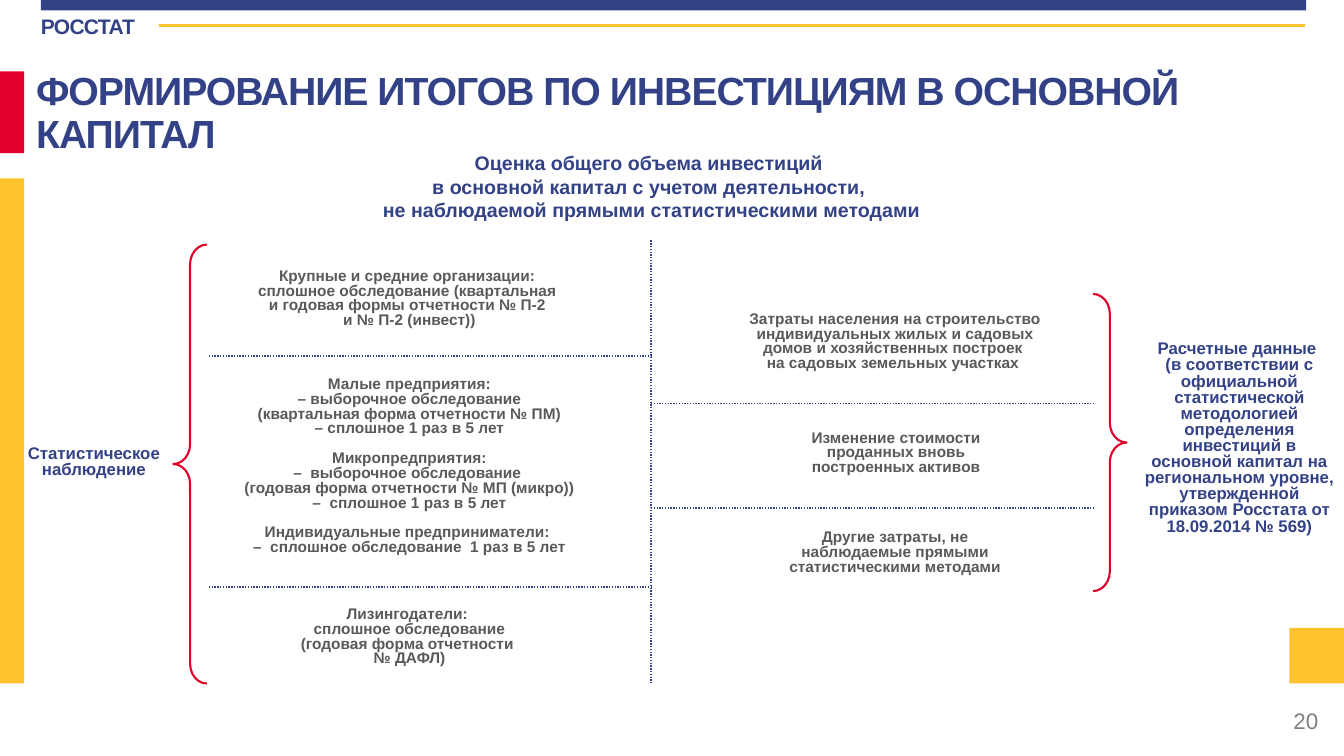
import copy

import pptx
import pptx.dml.color
import pptx.enum.dml
import pptx.enum.shapes
import pptx.enum.text
import pptx.oxml.ns
import pptx.util

PX = 9525
BLUE, RED, YELLOW, GREY = "334286", "E1002B", "FFC32E", "595959"
ALIGN = pptx.enum.text.PP_ALIGN
SHAPE = pptx.enum.shapes.MSO_SHAPE

SURVEYS = [
    (24, 23, 334, 66, [
        "Крупные и средние организации: \vсплошное обследование (квартальная \v"
        "и годовая формы отчетности № П-2 \vи № П-2 (инвест))"]),
    (24, 126, 334, 180, [
        "Малые предприятия:\v– выборочное обследование\v"
        "(квартальная форма отчетности № ПМ)\v– сплошное 1 раз в 5 лет",
        "Микропредприятия:\v–  выборочное обследование \v"
        "(годовая форма отчетности № МП (микро))\v–  сплошное 1 раз в 5 лет",
        "Индивидуальные предприниматели: \v–  сплошное обследование  1 раз в 5 лет"]),
    (46, 345, 290, 66, [
        "Лизингодатели: \vсплошное обследование\v(годовая форма отчетности \v№ ДАФЛ)"]),
]
ESTIMATES = [
    (73, 64, 319, 66, [
        "Затраты населения на строительство индивидуальных жилых и садовых домов "
        "и хозяйственных построек \vна садовых земельных участках "]),
    (110, 177, 247, 53, ["Изменение стоимости проданных вновь построенных активов"]),
    (100, 272, 265, 53, ["Другие затраты, не наблюдаемые прямыми статистическими методами"]),
]
METHOD = ("Расчетные данные \v(в соответствии с официальной статистической методологией "
          "определения инвестиций в основной капитал на региональном уровне, "
          "утвержденной приказом Росстата от 18.09.2014 № 569)")


def color(value):
    """Return an RGB colour from a hex string."""
    return pptx.dml.color.RGBColor.from_string(value)


def emu(*lengths):
    """Turn px lengths into EMU."""
    return [length * PX for length in lengths]


def text(s, box, paragraphs, size, fill=BLUE, bold=True, align=ALIGN.CENTER,
         leading=None, gap=0, tracking=0):
    """Add a wrapped text box and return its text frame."""
    tf = s.shapes.add_textbox(*emu(*box)).text_frame
    tf.word_wrap = True
    tf.text = "\n".join(paragraphs)
    for i, p in enumerate(tf.paragraphs):
        p.alignment = align
        if leading:
            p.line_spacing = leading
        if i and gap:
            p.space_before = pptx.util.Pt(gap)
        for r in p.runs:
            r.font.name, r.font.size, r.font.bold = "Arial", pptx.util.Pt(size), bold
            r.font.color.rgb = color(fill)
            if tracking:
                r.font._element.set("spc", str(tracking))
        for br in p._p.findall(pptx.oxml.ns.qn("a:br")):
            br.append(copy.deepcopy(p.runs[0].font._element))
    return tf


def block(s, box, fill):
    """Add a plain filled rectangle."""
    sp = s.shapes.add_shape(SHAPE.RECTANGLE, *emu(*box))
    sp.shadow.inherit = False
    sp.fill.solid()
    sp.fill.fore_color.rgb = color(fill)
    sp.line.fill.background()


def line(s, x1, y1, x2, y2, fill=BLUE, width=1, dotted=True):
    """Add a straight line."""
    c = s.shapes.add_connector(pptx.enum.shapes.MSO_CONNECTOR.STRAIGHT, *emu(x1, y1, x2, y2))
    c.line.color.rgb = color(fill)
    c.line.width = pptx.util.Pt(width)
    if dotted:
        c.line.dash_style = pptx.enum.dml.MSO_LINE.ROUND_DOT
    c._element.spPr.append(c._element.makeelement(pptx.oxml.ns.qn("a:effectLst"), {}))


def brace(s, box, kind):
    """Add a red curly brace."""
    sp = s.shapes.add_shape(kind, *emu(*box))
    sp.shadow.inherit = False
    sp.fill.background()
    sp.line.color.rgb = color(RED)
    sp.line.width = pptx.util.Pt(1.5)
    sp.adjustments[0], sp.adjustments[1] = 0.59, 0.5


def frame(s, box):
    """Place the bars, agency name and page number at the slide edges."""
    x, y, w, h = box
    block(s, (x + 39, y, w - 75, 10), BLUE)
    tf = text(s, (x + 39, y + 12, 110, 31), ["РОССТАТ"], 15, align=ALIGN.LEFT, tracking=-50)
    tf.margin_left = tf.margin_right = tf.margin_bottom = 0
    tf.margin_top = PX
    line(s, x + 151, y + 24, x + w - 37, y + 24, YELLOW, 2, False)
    block(s, (x, y + 68, 23, 78), RED)
    block(s, (x, y + 170, 23, 481), YELLOW)
    block(s, (x + w - 52, y + 598, 52, 53), YELLOW)
    tf = text(s, (x + w - 303, y + h - 53, 288, 38), ["20"], 16, "808080", False, ALIGN.RIGHT)
    tf.vertical_anchor = pptx.enum.text.MSO_ANCHOR.MIDDLE


def header(s, box):
    """Place the title and the heading under it."""
    x, y, w, h = box
    text(s, (x, y, w, 97), ["ФОРМИРОВАНИЕ ИТОГОВ ПО ИНВЕСТИЦИЯМ В ОСНОВНОЙ КАПИТАЛ"], 28,
         align=ALIGN.LEFT, leading=0.9, tracking=-70)
    text(s, (x + 299, y + h - 78, 593, 78), [
        "Оценка общего объема инвестиций \vв основной капитал с учетом деятельности, \v"
        "не наблюдаемой прямыми статистическими методами"], 14)


def column(s, box, cells, rules):
    """Place the text cells of one column and the dotted rules between them."""
    x, y, w, h = box
    for dx, dy, cw, ch, paragraphs in cells:
        text(s, (x + dx, y + dy, cw, ch), paragraphs, 11, GREY, leading=0.8, gap=10.6)
    for dy in rules:
        line(s, x, y + dy, x + w, y + dy)


def scheme(s, box):
    """Place both columns with their braces and side labels."""
    x, y, w, h = box
    mid, half = x + 609, 421
    column(s, (mid - half, y, half, h), SURVEYS, [110, 330])
    column(s, (mid, y, half, h), ESTIMATES, [155, 255])
    line(s, mid, y, mid, y + h)
    brace(s, (mid - half - 34, y + 4, 32, h - 4), SHAPE.LEFT_BRACE)
    brace(s, (mid + half, y + 51, 32, 283), SHAPE.RIGHT_BRACE)
    text(s, (x, y + 192, 157, 40), ["Статистическое наблюдение"], 12, leading=0.8)
    text(s, (x + w - 205, y + 92, 205, 196), [METHOD], 12, leading=0.8)


def main():
    """Build and save the slide."""
    prs = pptx.Presentation()
    prs.slide_width, prs.slide_height = emu(1280, 720)
    s = prs.slides.add_slide(prs.slide_layouts[6])
    frame(s, (0, 0, 1280, 720))
    header(s, (25, 64, 1262, 153))
    scheme(s, (11, 229, 1272, 422))
    prs.save("out.pptx")


if __name__ == "__main__":
    main()
